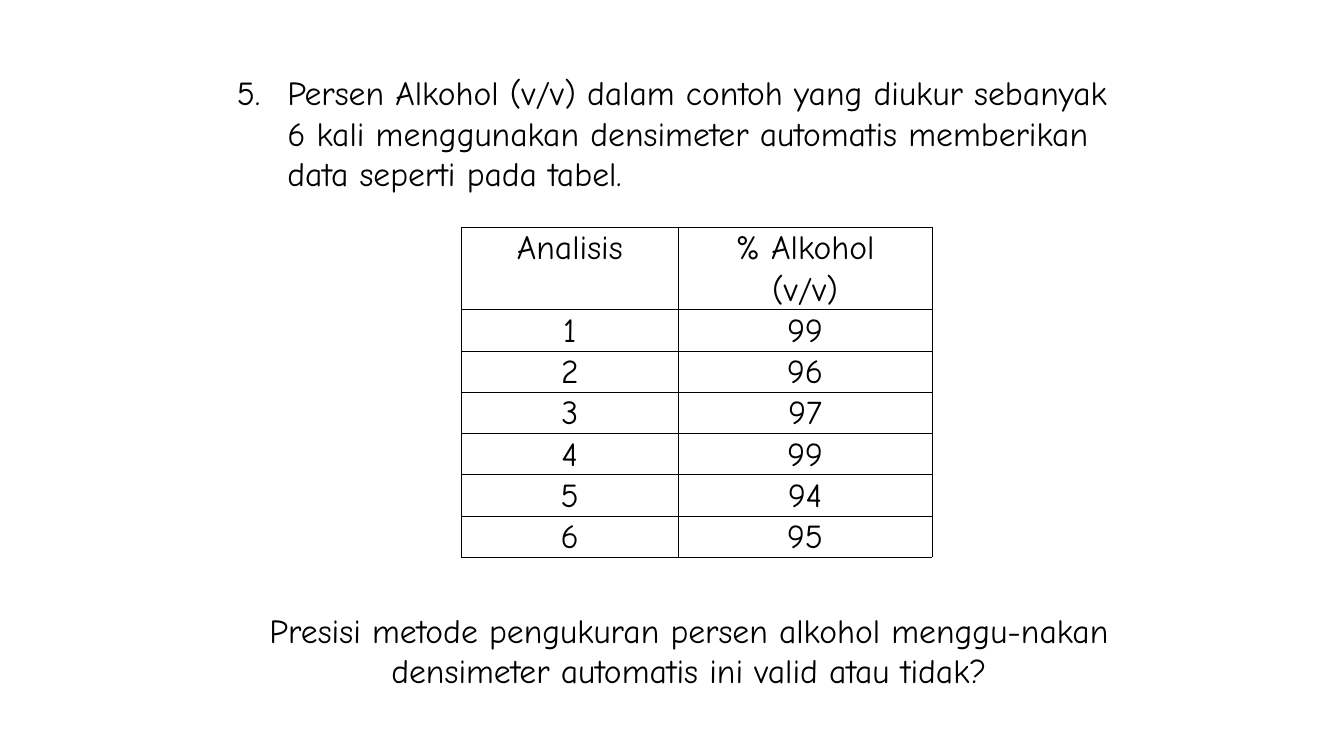
"""Builds the slide with the alcohol precision question and its data table."""
from dataclasses import dataclass

from lxml import etree
from pptx import Presentation
from pptx import util as u
from pptx.dml import color
from pptx.enum import text
from pptx.oxml import ns

FONT = "Comic Neue"
BLACK = "000000"
ROWS = [
    ("Analisis", "% Alkohol"),
    ("", "(v/v)"),
    ("1", "99"),
    ("2", "96"),
    ("3", "97"),
    ("4", "99"),
    ("5", "94"),
    ("6", "95"),
]
COLUMN_WIDTHS = (5.46, 6.4)
ROW_HEIGHT = 1.04


@dataclass
class Paragraph:
    """A text box with one paragraph, measured in centimetres."""
    left: float
    top: float
    width: float
    height: float
    words: str
    centred: bool = False
    number: int = 0


PARAGRAPHS = [
    Paragraph(5.72, 1.7, 22.66, 3.33,
              "Persen Alkohol (v/v) dalam contoh yang diukur sebanyak 6 kali "
              "menggunakan densimeter automatis memberikan data seperti pada tabel.",
              number=5),
    Paragraph(6.35, 15.24, 22.02, 3.07,
              "Presisi metode pengukuran persen alkohol menggu-nakan "
              "densimeter automatis ini valid atau tidak?",
              centred=True),
]


def rgb(value: str) -> color.RGBColor:
    """Turns a hex string into a colour."""
    return color.RGBColor.from_string(value)


def add_run(p, words: str) -> None:
    """Adds a run in the slide's font."""
    r = p.add_run()
    r.text = words
    r.font.name = FONT
    r.font.size = u.Pt(24)
    r.font.color.rgb = rgb(BLACK)


def set_number(p, start: int) -> None:
    """Numbers a paragraph with a hanging indent."""
    pPr = p._p.get_or_add_pPr()
    pPr.set("marL", str(u.Cm(1.27)))
    pPr.set("indent", str(u.Cm(-1.27)))
    font = etree.SubElement(pPr, ns.qn("a:buFont"))
    font.set("typeface", "+mj-lt")
    bullet = etree.SubElement(pPr, ns.qn("a:buAutoNum"))
    bullet.set("type", "arabicPeriod")
    bullet.set("startAt", str(start))


def add_paragraph(s, item: Paragraph) -> None:
    """Draws one text box."""
    box = s.shapes.add_textbox(u.Cm(item.left), u.Cm(item.top),
                               u.Cm(item.width), u.Cm(item.height))
    tf = box.text_frame
    tf.word_wrap = True
    tf.auto_size = text.MSO_AUTO_SIZE.SHAPE_TO_FIT_TEXT
    p = tf.paragraphs[0]
    if item.centred:
        p.alignment = text.PP_ALIGN.CENTER
    if item.number:
        set_number(p, item.number)
    add_run(p, item.words)


def set_borders(cell, hidden: str) -> None:
    """Gives a cell thin black borders except on the hidden side."""
    tcPr = cell._tc.get_or_add_tcPr()
    for i, side in enumerate("LRTB"):
        line = etree.Element(ns.qn(f"a:ln{side}"), w=str(u.Pt(0.5)))
        if side == hidden:
            etree.SubElement(line, ns.qn("a:noFill"))
        else:
            fill = etree.SubElement(line, ns.qn("a:solidFill"))
            etree.SubElement(fill, ns.qn("a:srgbClr"), val=BLACK)
        tcPr.insert(i, line)


def add_data_table(s) -> None:
    """Draws the table of measurements."""
    table = s.shapes.add_table(len(ROWS), len(COLUMN_WIDTHS), u.Cm(11.63), u.Cm(5.72),
                               u.Cm(sum(COLUMN_WIDTHS)),
                               u.Cm(ROW_HEIGHT * len(ROWS))).table
    table.first_row = table.horz_banding = False
    for column, width in zip(table.columns, COLUMN_WIDTHS):
        column.width = u.Cm(width)
    for i, values in enumerate(ROWS):
        table.rows[i].height = u.Cm(ROW_HEIGHT)
        for j, value in enumerate(values):
            cell = table.cell(i, j)
            cell.margin_left = cell.margin_right = cell.margin_top = u.Cm(0.03)
            cell.margin_bottom = 0
            cell.vertical_anchor = text.MSO_ANCHOR.BOTTOM
            cell.fill.background()
            set_borders(cell, {0: "B", 1: "T"}.get(i, ""))
            p = cell.text_frame.paragraphs[0]
            p.alignment = text.PP_ALIGN.CENTER
            if value:
                add_run(p, value)


def main() -> None:
    """Builds and saves the slide."""
    prs = Presentation()
    prs.slide_width, prs.slide_height = u.Cm(33.87), u.Cm(19.05)
    s = prs.slides.add_slide(prs.slide_layouts[6])
    s.background.fill.solid()
    s.background.fill.fore_color.rgb = rgb("FFFFFF")
    add_data_table(s)
    for item in PARAGRAPHS:
        add_paragraph(s, item)
    prs.save("out.pptx")


if __name__ == "__main__":
    main()
